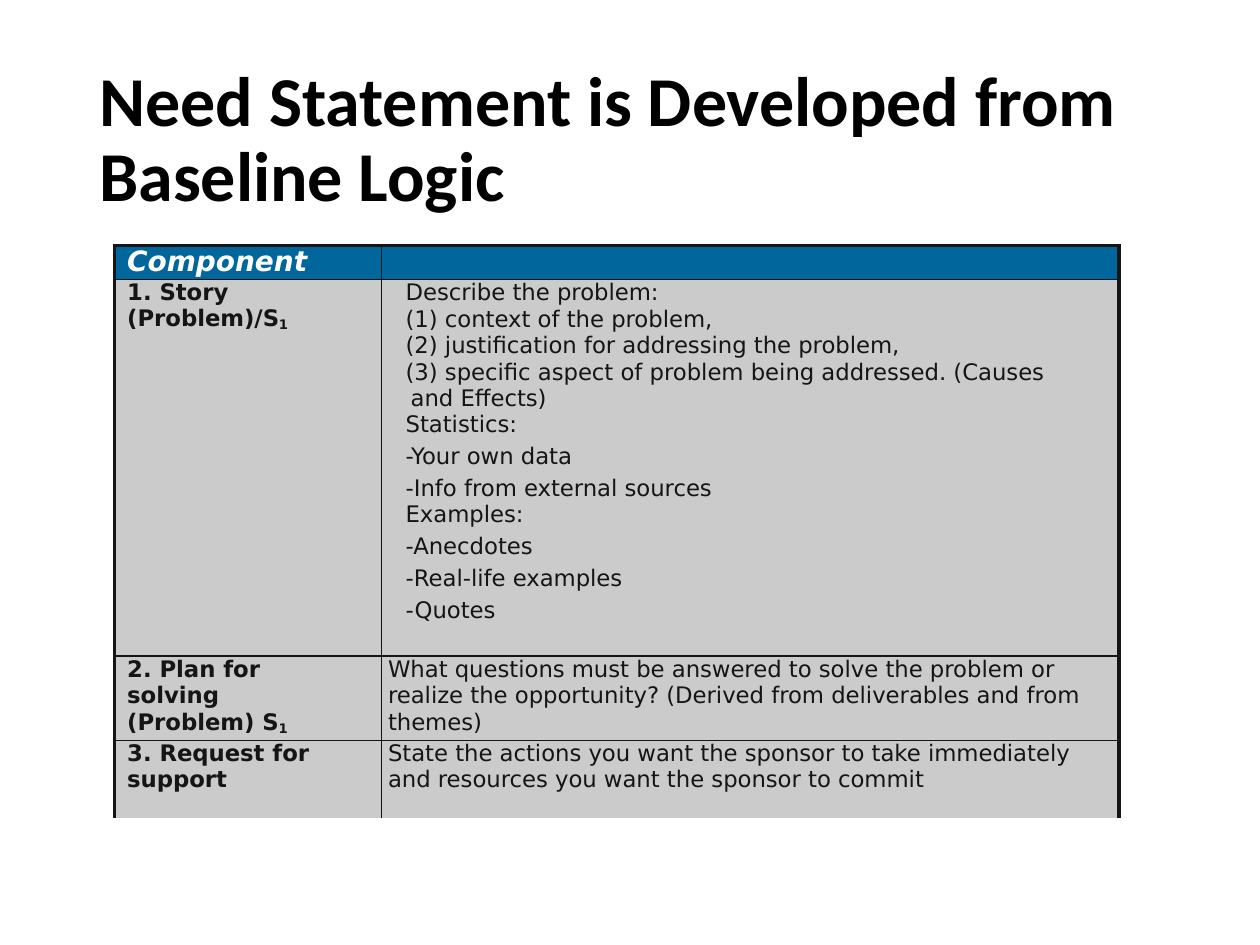
from lxml.etree import SubElement
from pptx import Presentation
from pptx.dml.color import RGBColor
from pptx.enum.text import MSO_ANCHOR
from pptx.oxml.ns import qn
from pptx.util import Inches, Pt

COLORS = {"ink": "151515", "title": "000000", "head": "00669C",
          "body": "CBCBCB", "white": "FFFFFF"}
BODY_FONT = "DejaVu Sans"
COLS = [2.12, 5.85]
ROWS = [0.25, 2.99, 0.65, 0.62]
RIGHT_MARGINS = [0.48, 0.25]

LABELS = [["1. Story (Problem)/S", "1"],
          ["2. Plan for solving (Problem) S", "1"],
          ["3. Request for support"]]
STORY_STEPS = ["Describe the problem:",
               "(1) context of the problem,",
               "(2) justification for addressing the problem,",
               "(3) specific aspect of problem being addressed. (Causes and Effects)"]
STORY_SOURCES = {"Statistics:": ["-Your own data", "-Info from external sources"],
                 "Examples:": ["-Anecdotes", "-Real-life examples", "-Quotes"]}
ANSWERS = ["What questions must be answered to solve the problem or realize the "
           "opportunity? (Derived from deliverables and from themes)",
           "State the actions you want the sponsor to take immediately and "
           "resources you want the sponsor to commit"]


def rgb(name):
    return RGBColor.from_string(COLORS[name])


def add_run(p, text, size, color="ink", bold=False, italic=False, font=BODY_FONT):
    r = p.add_run()
    r.text = text
    f = r.font
    f.name, f.size, f.bold, f.italic = font, Pt(size), bold, italic
    f.color.rgb = rgb(color)
    return r


def add_para(tf, left, first=0, spacing=1.0, before=0):
    p = tf.paragraphs[0]
    if p.runs:
        p = tf.add_paragraph()
    p.line_spacing, p.space_before = spacing, Pt(before)
    pPr = p._p.get_or_add_pPr()
    pPr.set("marL", str(Inches(left)))
    pPr.set("indent", str(Inches(first)))
    return p


def add_border(tcPr, side, width):
    ln = SubElement(tcPr, qn(f"a:ln{side}"), w=str(Pt(width)))
    if width:
        fill = SubElement(ln, qn("a:solidFill"))
        SubElement(fill, qn("a:srgbClr"), val=COLORS["ink"])
    else:
        SubElement(ln, qn("a:noFill"))


def style_cell(cell, row, col):
    cell.margin_left = cell.margin_top = cell.margin_bottom = 0
    cell.margin_right = Inches(RIGHT_MARGINS[col])
    widths = {"L": 1 if col else 2.25, "R": 2.25 if col else 1,
              "T": 1 if row else 2.25, "B": 0 if row == len(ROWS) - 1 else 1}
    tcPr = cell._tc.get_or_add_tcPr()
    for side, width in widths.items():
        add_border(tcPr, side, width)
    cell.fill.solid()
    cell.fill.fore_color.rgb = rgb("body" if row else "head")


def add_title(s, prs):
    w, h = prs.slide_width, prs.slide_height
    tb = s.shapes.add_textbox(int(w * 0.069), int(h * 0.053), int(w * 0.862), int(h * 0.193))
    tf = tb.text_frame
    tf.word_wrap = True
    tf.vertical_anchor = MSO_ANCHOR.MIDDLE
    p = tf.paragraphs[0]
    p.line_spacing = 0.9
    add_run(p, "Need Statement is Developed from Baseline Logic", 40, "title", True, font="Calibri")


def add_grid(s):
    gf = s.shapes.add_table(len(ROWS), len(COLS), Inches(0.91), Inches(1.95),
                            Inches(sum(COLS)), Inches(sum(ROWS)))
    table = gf.table
    table.first_row = table.horz_banding = False
    for column, width in zip(table.columns, COLS):
        column.width = Inches(width)
    for i, height in enumerate(ROWS):
        table.rows[i].height = Inches(height)
        for j in range(len(COLS)):
            style_cell(table.cell(i, j), i, j)
    return table


def fill_header(table):
    p = add_para(table.cell(0, 0).text_frame, 0.1)
    add_run(p, "Component", 16, "white", True, True)
    p = table.cell(0, 1).text_frame.paragraphs[0]
    SubElement(p._p, qn("a:endParaRPr"), sz="1300")


def fill_labels(table):
    for i, (text, *subscript) in enumerate(LABELS, 1):
        p = add_para(table.cell(i, 0).text_frame, 0.1, spacing=1.0 if i == 1 else 1.01)
        add_run(p, text, 13, bold=True)
        for mark in subscript:
            r = add_run(p, mark, 13, bold=True)
            r.font._element.set("baseline", "-15000")


def fill_story(tf):
    for step in STORY_STEPS:
        add_run(add_para(tf, 0.23, -0.04, 1.01), step, 13)
    for heading, items in STORY_SOURCES.items():
        add_run(add_para(tf, 0.19), heading, 13)
        for item in items:
            add_run(add_para(tf, 0.19, before=3.2), item, 13)


def fill_answers(table):
    for i, answer in enumerate(ANSWERS, 2):
        add_run(add_para(table.cell(i, 1).text_frame, 0.05, spacing=1.01), answer, 13)


def main():
    prs = Presentation()
    prs.slide_width, prs.slide_height = Inches(10), Inches(7.5)
    s = prs.slides.add_slide(prs.slide_layouts[6])
    add_title(s, prs)
    table = add_grid(s)
    fill_header(table)
    fill_labels(table)
    fill_story(table.cell(1, 1).text_frame)
    fill_answers(table)
    prs.save("out.pptx")


if __name__ == "__main__":
    main()
